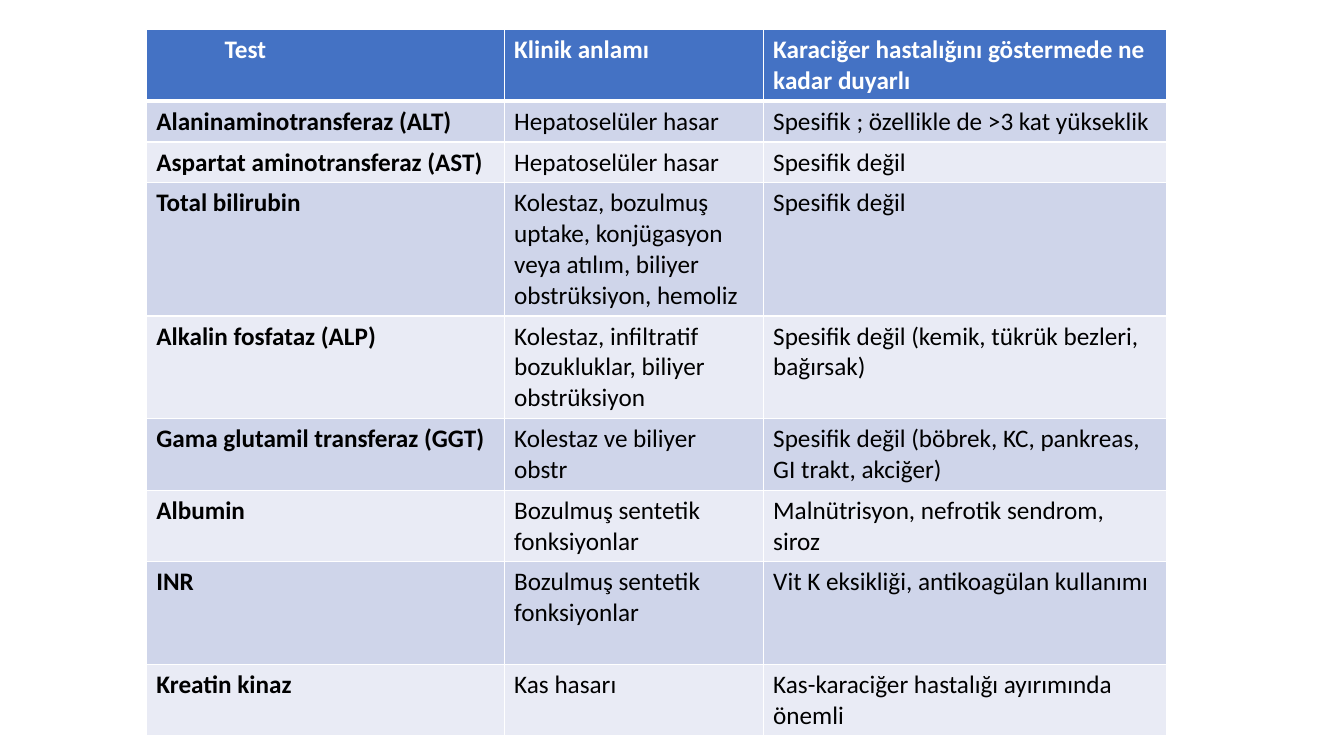
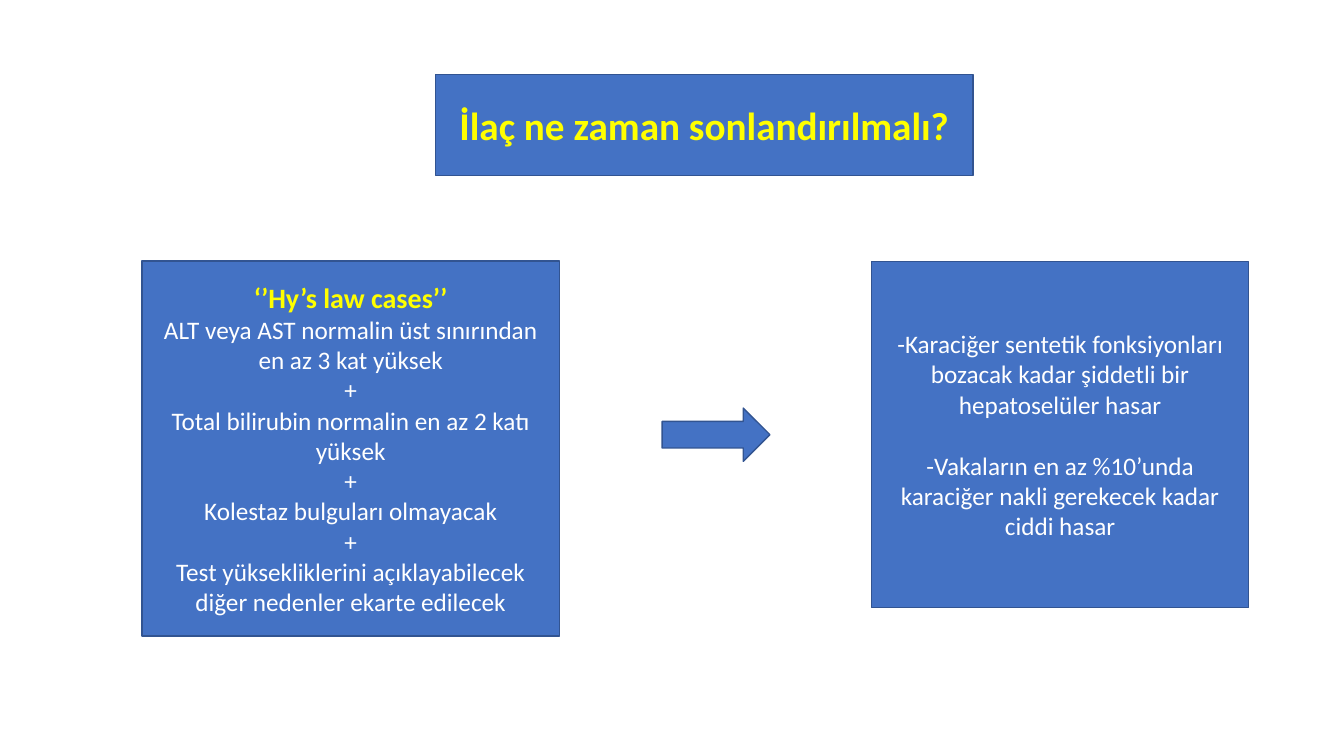
from lxml.etree import SubElement
from pptx import Presentation
from pptx.dml.color import RGBColor
from pptx.enum.shapes import MSO_SHAPE as SHAPE
from pptx.enum.text import MSO_ANCHOR as ANCHOR, MSO_AUTO_SIZE as AUTO_SIZE, PP_ALIGN as ALIGN
from pptx.oxml.ns import qn
from pptx.util import Pt

BLUE = RGBColor(0x44, 0x72, 0xC4)
EDGE = RGBColor(0x32, 0x54, 0x91)
BAND_DARK = RGBColor(0xCF, 0xD5, 0xEA)
BAND_LIGHT = RGBColor(0xE9, 0xEB, 0xF5)
YELLOW = RGBColor(0xFF, 0xFF, 0x00)
WHITE = RGBColor(0xFF, 0xFF, 0xFF)
BLACK = RGBColor(0, 0, 0)
FONT = "Calibri"
BODY = 18
LINE_HEIGHT, CELL_PADDING = 22, 7.2

TESTS = [
    (2, "Test", "Klinik anlamı", "Karaciğer hastalığını göstermede ne kadar duyarlı"),
    (1, "Alaninaminotransferaz (ALT)", "Hepatoselüler hasar",
     "Spesifik ; özellikle de >3 kat yükseklik"),
    (1, "Aspartat aminotransferaz (AST)", "Hepatoselüler hasar", "Spesifik değil"),
    (4, "Total bilirubin",
     "Kolestaz, bozulmuş uptake, konjügasyon veya atılım, biliyer obstrüksiyon, hemoliz",
     "Spesifik değil"),
    (3, "Alkalin fosfataz (ALP)", "Kolestaz, infiltratif bozukluklar, biliyer obstrüksiyon",
     "Spesifik değil (kemik, tükrük bezleri, bağırsak)"),
    (2, "Gama glutamil transferaz (GGT)", "Kolestaz ve biliyer obstr",
     "Spesifik değil (böbrek, KC, pankreas, GI trakt, akciğer)"),
    (2, "Albumin", "Bozulmuş sentetik fonksiyonlar", "Malnütrisyon, nefrotik sendrom, siroz"),
    (3, "INR", "Bozulmuş sentetik fonksiyonlar", "Vit K eksikliği, antikoagülan kullanımı"),
    (2, "Kreatin kinaz", "Kas hasarı", "Kas-karaciğer hastalığı ayırımında önemli"),
]
COLUMNS = (255.6, 185, 288)
TABLE_AT = (104.5, 21)
HEADER_INDENT = 56

TITLE = "İlaç ne zaman sonlandırılmalı?"
TITLE_AT = (311, 53.3, 384, 72)
CRITERIA_HEADING = "‘’Hy’s law cases’’"
CRITERIA = [
    "ALT veya AST normalin üst sınırından en az 3 kat yüksek",
    "Total bilirubin normalin en az 2 katı yüksek",
    "Kolestaz bulguları olmayacak",
    "Test yüksekliklerini açıklayabilecek diğer nedenler ekarte edilecek",
]
CRITERIA_AT = (101.5, 186.5, 298, 268)
ARROW_AT = (473, 291.5, 77, 38)
OUTCOMES = [
    "-Karaciğer sentetik fonksiyonları bozacak kadar şiddetli bir hepatoselüler hasar",
    "-Vakaların en az %10’unda karaciğer nakli gerekecek kadar ciddi hasar",
]
OUTCOMES_AT = (622.5, 187, 269.5, 247)


def add_run(p, text, color, size=BODY, bold=False):
    r = p.add_run()
    r.text = text
    r.font.name, r.font.size, r.font.bold = FONT, Pt(size), bold
    r.font.color.rgb = color


def paint(sp):
    sp.fill.solid()
    sp.fill.fore_color.rgb = BLUE
    sp.line.color.rgb = EDGE
    sp.line.width = Pt(1)


def write(sp, paragraphs, gap=0):
    tf = sp.text_frame
    tf.word_wrap = True
    tf.auto_size = AUTO_SIZE.NONE
    tf.vertical_anchor = ANCHOR.MIDDLE
    for i, run in enumerate(paragraphs):
        p = tf.add_paragraph() if i else tf.paragraphs[0]
        p.alignment = ALIGN.CENTER
        p.space_before = Pt(gap if i else 0)
        add_run(p, *run)


def add_box(slide, kind, at):
    sp = slide.shapes.add_shape(kind, *map(Pt, at))
    sp.shadow.inherit = False
    paint(sp)
    return sp


def set_border(cell, side, width):
    ln = SubElement(cell._tc.get_or_add_tcPr(), qn("a:ln" + side), w=str(Pt(width)))
    fill = SubElement(ln, qn("a:solidFill"))
    SubElement(fill, qn("a:srgbClr"), val=str(WHITE))


def format_cell(cell, row, col, text):
    header = row == 0
    for side in "LRTB":
        thick = (row, side) in ((0, "B"), (1, "T"))
        set_border(cell, side, 3 if thick else 1)
    cell.fill.solid()
    cell.fill.fore_color.rgb = BLUE if header else BAND_DARK if row % 2 else BAND_LIGHT
    add_run(cell.text_frame.paragraphs[0], text, WHITE if header else BLACK,
            bold=header or col == 0)


def build_test_table(prs):
    slide = prs.slides.add_slide(prs.slide_layouts[6])
    heights = [CELL_PADDING + LINE_HEIGHT * lines for lines, *_ in TESTS]
    size = (sum(COLUMNS), sum(heights))
    table = slide.shapes.add_table(len(TESTS), len(COLUMNS), *map(Pt, TABLE_AT + size)).table
    for column, width in zip(table.columns, COLUMNS):
        column.width = Pt(width)
    for i, (_, *texts) in enumerate(TESTS):
        table.rows[i].height = Pt(heights[i])
        for j, text in enumerate(texts):
            format_cell(table.cell(i, j), i, j, text)
    table.cell(0, 0).margin_left = Pt(HEADER_INDENT)


def build_stopping_rule(prs):
    slide = prs.slides.add_slide(prs.slide_layouts[5])
    title = slide.shapes.title
    title.left, title.top, title.width, title.height = map(Pt, TITLE_AT)
    paint(title)
    write(title, [(TITLE, YELLOW, 28, True)])

    criteria = [(CRITERIA_HEADING, YELLOW, 20, True)]
    for i, text in enumerate(CRITERIA):
        if i:
            criteria.append(("+", WHITE))
        criteria.append((text, WHITE))
    write(add_box(slide, SHAPE.RECTANGLE, CRITERIA_AT), criteria)
    add_box(slide, SHAPE.RIGHT_ARROW, ARROW_AT)
    write(add_box(slide, SHAPE.RECTANGLE, OUTCOMES_AT),
          [(text, WHITE) for text in OUTCOMES], gap=LINE_HEIGHT)


def main():
    prs = Presentation()
    prs.slide_width, prs.slide_height = Pt(960), Pt(540)
    build_test_table(prs)
    build_stopping_rule(prs)
    prs.save("out.pptx")


if __name__ == "__main__":
    main()
